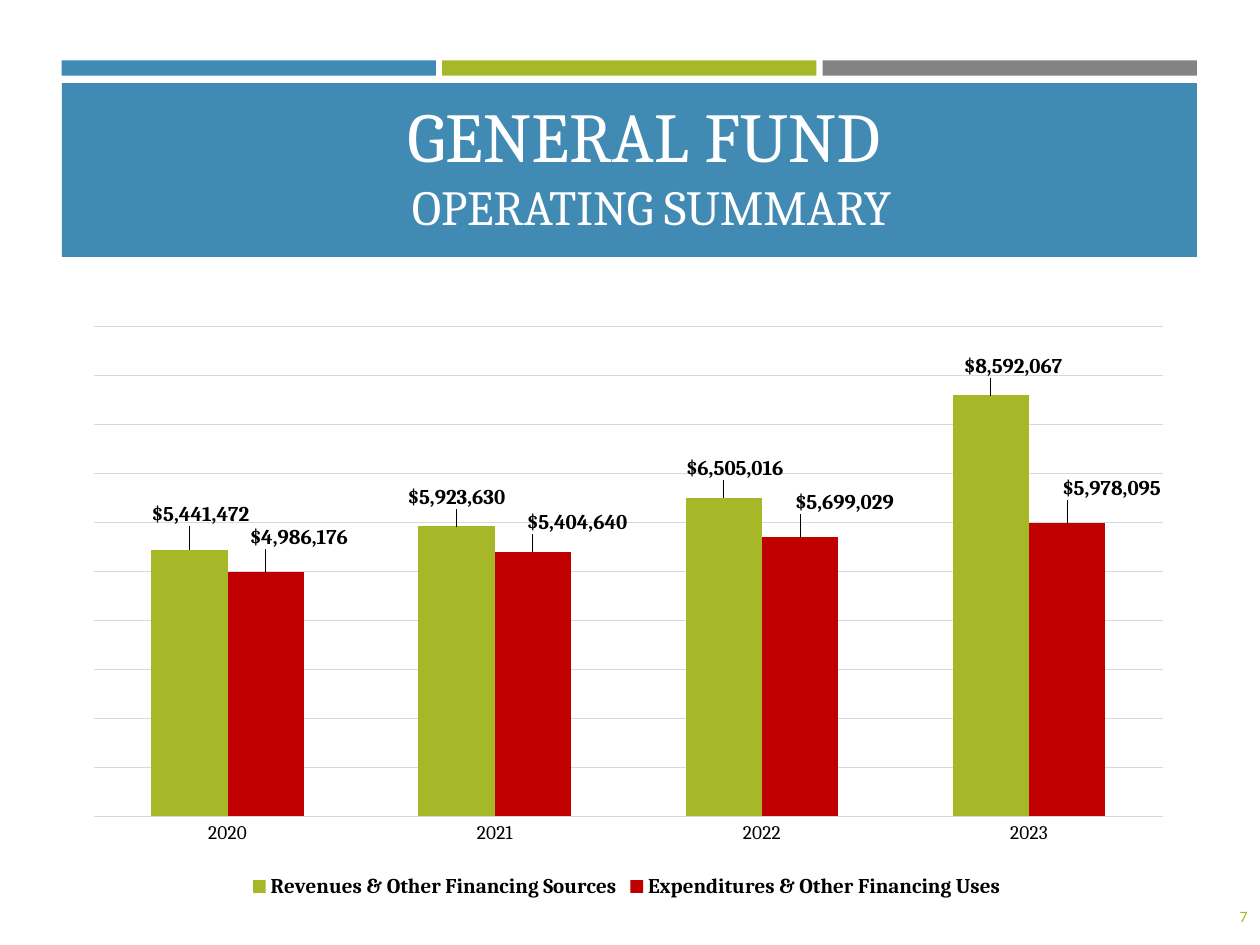
from lxml import etree
from pptx import Presentation
from pptx.chart.data import CategoryChartData
from pptx.dml.color import RGBColor
from pptx.enum import chart as ch, shapes, text
from pptx.oxml import ns
from pptx.util import Inches, Pt

BLUE, GREEN, GRAY, RED = "418AB3", "A6B727", "838383", "C00000"
BLACK, WHITE, GRID = "000000", "FFFFFF", "D9D9D9"
YEARS = ["2020", "2021", "2022", "2023"]
SERIES = [
    ("Revenues & Other Financing Sources", GREEN,
     (5441472, 5923630, 6505016, 8592067),
     ((0.01, -0.03), (0, -0.02), (0.01, -0.02), (0.02, -0.02))),
    ("Expenditures & Other Financing Uses", RED,
     (4986176, 5404640, 5699029, 5978095),
     ((0.03, -0.03), (0.04, -0.02), (0.04, -0.03), (0.04, -0.03))),
]


def paint(color_format, hex_color):
    """Set a colour from a hex string."""
    color_format.rgb = RGBColor.from_string(hex_color)


def style_font(font, size, color, name="Cambria", bold=False):
    """Set the face, size, weight and colour of a font."""
    font.name, font.size, font.bold = name, Pt(size), bold
    paint(font.color, color)


def fill_solid(fill, color):
    """Fill with one colour."""
    fill.solid()
    paint(fill.fore_color, color)


def add_bar(slide, left, top, width, height, color):
    """Add a plain rectangle."""
    bar = slide.shapes.add_shape(
        shapes.MSO_SHAPE.RECTANGLE, *map(Inches, (left, top, width, height)))
    bar.shadow.inherit = False
    fill_solid(bar.fill, color)
    bar.line.fill.background()


def add_header(slide):
    """Add the three accent strips, the band and the title on it."""
    for column, color in enumerate((BLUE, GREEN, GRAY)):
        add_bar(slide, 0.49 + column * 3.02, 0.48, 2.97, 0.12, color)
    add_bar(slide, 0.49, 0.66, 9.01, 1.38, BLUE)
    title = slide.shapes.title
    title.element.getparent().append(title.element)
    title.left, title.top, title.width, title.height = map(
        Inches, (0.42, 0.42, 9.5, 1.5))
    frame = title.text_frame
    frame.text = "GENERAL FUND \vOPERATING SUMMARY"
    frame.auto_size = text.MSO_AUTO_SIZE.NONE
    frame.vertical_anchor = text.MSO_ANCHOR.BOTTOM
    heading = frame.paragraphs[0]
    heading.alignment = text.PP_ALIGN.CENTER
    for run, size in zip(heading.runs, (40, 28)):
        style_font(run.font, size, WHITE)


def add_page_number(slide, number):
    """Add the page number in the bottom right corner."""
    box = slide.shapes.add_textbox(*map(Inches, (9.16, 7.07, 0.84, 0.4)))
    frame = box.text_frame
    frame.word_wrap = True
    frame.vertical_anchor = text.MSO_ANCHOR.MIDDLE
    frame.text = number
    frame.paragraphs[0].alignment = text.PP_ALIGN.RIGHT
    style_font(frame.paragraphs[0].runs[0].font, 9, GREEN, "Calibri")


def manual_layout(**settings):
    """Return a chart layout element with the given settings."""
    layout = etree.Element(ns.qn("c:layout"))
    manual = etree.SubElement(layout, ns.qn("c:manualLayout"))
    for key, value in settings.items():
        etree.SubElement(manual, ns.qn("c:" + key)).set("val", str(value))
    return layout


def place_plot(chart):
    """Fix the inner plot area inside the chart."""
    plot_area = chart.element.find(".//" + ns.qn("c:plotArea"))
    for old in plot_area.findall(ns.qn("c:layout")):
        plot_area.remove(old)
    plot_area.insert(0, manual_layout(
        layoutTarget="inner", xMode="edge", yMode="edge",
        x=0.019, y=0.032, w=0.965, h=0.822))


def style_series(series, color, offsets):
    """Colour a series and shift its value labels."""
    fill_solid(series.format.fill, color)
    series.invert_if_negative = False
    labels = series.data_labels
    labels.show_value = True
    style_font(labels.font, 12, BLACK, bold=True)
    for index, (x, y) in enumerate(offsets):
        label = series.points[index].data_label
        style_font(label.font, 12, BLACK, bold=True)
        label.position = ch.XL_LABEL_POSITION.OUTSIDE_END
    for entry, (x, y) in zip(labels._element.findall(ns.qn("c:dLbl")), offsets):
        entry.insert(1, manual_layout(x=x, y=y))


def style_axes(chart):
    """Show the years and gridlines, and hide the value axis."""
    years, amounts = chart.category_axis, chart.value_axis
    years.major_tick_mark = ch.XL_TICK_MARK.NONE
    years.format.line.fill.background()
    style_font(years.tick_labels.font, 11, BLACK)
    amounts.visible = False
    amounts.minimum_scale, amounts.maximum_scale = 0, 10_000_000
    amounts.major_unit = 1_000_000
    grid = amounts.major_gridlines.format.line
    grid.width = Pt(0.75)
    paint(grid.color, GRID)


def add_summary_chart(slide):
    """Add the column chart of revenues and expenditures."""
    data = CategoryChartData(number_format='"$"#,##0')
    data.categories = YEARS
    for name, _, values, _ in SERIES:
        data.add_series(name, values)
    chart = slide.shapes.add_chart(
        ch.XL_CHART_TYPE.COLUMN_CLUSTERED,
        *map(Inches, (0.58, 2.44, 8.79, 4.73)), data).chart
    chart.has_title = False
    style_font(chart.font, 10, BLACK)
    plot = chart.plots[0]
    plot.gap_width, plot.overlap, plot.vary_by_categories = 150, 0, False
    for series, (_, color, _, offsets) in zip(plot.series, SERIES):
        style_series(series, color, offsets)
    style_axes(chart)
    place_plot(chart)
    chart.has_legend = True
    chart.legend.position = ch.XL_LEGEND_POSITION.BOTTOM
    chart.legend.include_in_layout = False
    style_font(chart.legend.font, 12, BLACK, bold=True)


def main():
    """Build and save the slide."""
    deck = Presentation()
    deck.slide_width, deck.slide_height = Inches(10), Inches(7.5)
    slide = deck.slides.add_slide(deck.slide_layouts[5])
    add_header(slide)
    add_page_number(slide, "7")
    add_summary_chart(slide)
    deck.save("out.pptx")


main()
